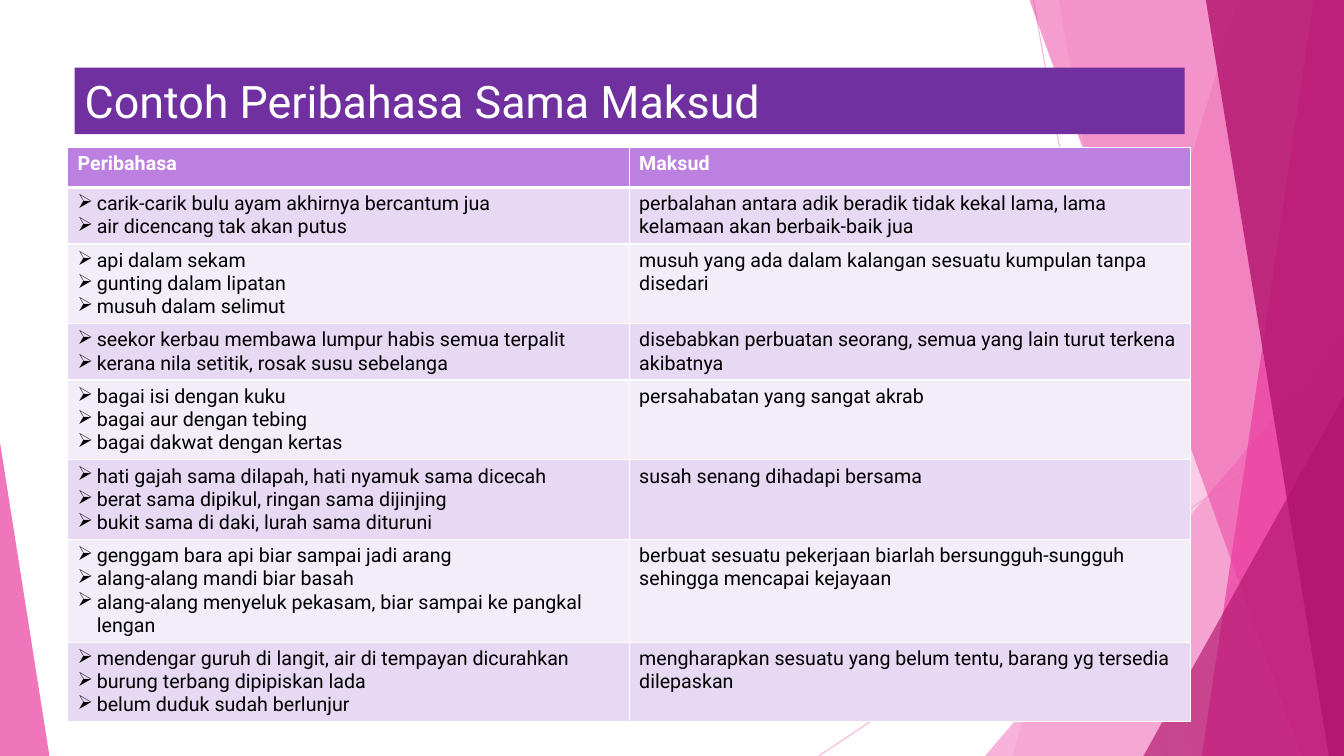
"""Build a slide with a table of Malay proverbs that share a meaning."""
from lxml import etree
from pptx import Presentation
from pptx.dml.color import RGBColor
from pptx.enum import shapes, text
from pptx.oxml import ns
from pptx import util as u

TITLE = "Contoh Peribahasa Sama Maksud"
HEADINGS = ("Peribahasa", "Maksud")
PROVERBS = [
    (["carik-carik bulu ayam akhirnya bercantum jua",
      "air dicencang tak akan putus"],
     "perbalahan antara adik beradik tidak kekal lama, lama kelamaan akan berbaik-baik jua"),
    (["api dalam sekam", "gunting dalam lipatan", "musuh dalam selimut"],
     "musuh yang ada dalam kalangan sesuatu kumpulan tanpa disedari"),
    (["seekor kerbau membawa lumpur habis semua terpalit",
      "kerana nila setitik, rosak susu sebelanga"],
     "disebabkan perbuatan seorang, semua yang lain turut terkena akibatnya"),
    (["bagai isi dengan kuku", "bagai aur dengan tebing", "bagai dakwat dengan kertas"],
     "persahabatan yang sangat akrab"),
    (["hati gajah sama dilapah, hati nyamuk sama dicecah",
      "berat sama dipikul, ringan sama dijinjing",
      "bukit sama di daki, lurah sama dituruni"],
     "susah senang dihadapi bersama"),
    (["genggam bara api biar sampai jadi arang", "alang-alang mandi biar basah",
      "alang-alang menyeluk pekasam, biar sampai ke pangkal lengan"],
     "berbuat sesuatu pekerjaan biarlah bersungguh-sungguh sehingga mencapai kejayaan"),
    (["mendengar guruh di langit, air di tempayan dicurahkan",
      "burung terbang dipipiskan lada", "belum duduk sudah berlunjur"],
     "mengharapkan sesuatu yang belum tentu, barang yg tersedia dilepaskan"),
]

PX = 9144
WIDTH, HEIGHT = 1333, 750
TITLE_BOX = (74, 67, 1101, 66)
TABLE_LEFT, TABLE_TOP, COLUMN = 67, 146, 557
HEADER_HEIGHT, LINE_HEIGHT, CELL_PADDING = 40, 23, 10
LINE_CHARS = 55
INDENT = 19

WHITE = RGBColor(0xFF, 0xFF, 0xFF)
BLACK = RGBColor(0x00, 0x00, 0x00)
PURPLE = RGBColor(0x70, 0x30, 0xA0)
HEADER = RGBColor(0xBC, 0x80, 0xE0)
BANDS = (RGBColor(0xE7, 0xD8, 0xF3), RGBColor(0xF3, 0xED, 0xF9))
PALE = RGBColor(0xF4, 0x96, 0xCB)
PINK = RGBColor(0xEB, 0x3D, 0x9F)
DEEP = RGBColor(0xB2, 0x13, 0x6D)

RAYS = [((1025, 0), (1158, HEIGHT)), ((WIDTH, 403), (812, HEIGHT))]
BLADE, TRIANGLE = "blade", "triangle"
FACETS = [
    (BLADE, (1228, 1004), PALE, 36),
    (BLADE, (1050, 1183), PALE, 20),
    (TRIANGLE, (977, 333, 356, 417, 1), PALE, 72),
    (BLADE, (1021, 1291), PINK, 50),
    (BLADE, (1303, 1192), PINK, 70),
    (BLADE, (1196, 1318), DEEP, 80),
    (TRIANGLE, (1134, 393, 199, 357, 1), DEEP, 66),
    (TRIANGLE, (0, 439, 49, 311, 0), PINK, 70),
]


def px(*lengths):
    return [length * PX for length in lengths]


def set_alpha(shape, percent):
    for color in shape._element.spPr.iter(ns.qn("a:srgbClr")):
        etree.SubElement(color, ns.qn("a:alpha"), val=str(percent * 1000))


def write(para, words, size=14, color=BLACK, bold=False, bullet=None):
    para.alignment = text.PP_ALIGN.LEFT
    span = para.add_run()
    span.text = words
    span.font.name = "Roboto"
    span.font.size = u.Pt(size)
    span.font.bold = bold
    span.font.color.rgb = color
    if bullet:
        props = para._p.get_or_add_pPr()
        props.set("marL", str(INDENT * PX))
        props.set("indent", str(-INDENT * PX))
        etree.SubElement(props, ns.qn("a:buChar"), char=bullet)


def draw_backdrop(page):
    for start, end in RAYS:
        ray = page.shapes.add_connector(shapes.MSO_CONNECTOR.STRAIGHT, *px(*start, *end))
        ray.line.color.rgb = PALE
        ray.line.width = u.Pt(0.75)
        set_alpha(ray, 70)
        etree.SubElement(ray._element.spPr, ns.qn("a:effectLst"))
    for kind, geometry, color, alpha in FACETS:
        if kind == BLADE:
            top, bottom = geometry
            outline = page.shapes.build_freeform(top, 0, scale=PX)
            outline.add_line_segments([(WIDTH, 0), (WIDTH, HEIGHT), (bottom, HEIGHT)])
            facet = outline.convert_to_shape()
        else:
            *frame, apex = geometry
            facet = page.shapes.add_shape(shapes.MSO_SHAPE.ISOSCELES_TRIANGLE, *px(*frame))
            facet.adjustments[0] = apex
        facet.shadow.inherit = False
        facet.line.fill.background()
        facet.fill.solid()
        facet.fill.fore_color.rgb = color
        set_alpha(facet, alpha)


def place_title(page):
    title = page.shapes.title
    page.shapes._spTree.append(title._element)
    title.left, title.top, title.width, title.height = px(*TITLE_BOX)
    title.fill.solid()
    title.fill.fore_color.rgb = PURPLE
    title.text_frame.vertical_anchor = text.MSO_ANCHOR.MIDDLE
    write(title.text_frame.paragraphs[0], TITLE, size=32, color=WHITE)


def format_cell(cell, fill, top=1, bottom=1):
    props = cell._tc.get_or_add_tcPr()
    for side, points in (("L", 1), ("R", 1), ("T", top), ("B", bottom)):
        border = etree.SubElement(props, ns.qn("a:ln" + side), w=str(u.Pt(points)))
        solid = etree.SubElement(border, ns.qn("a:solidFill"))
        etree.SubElement(solid, ns.qn("a:srgbClr"), val=str(WHITE))
    cell.fill.solid()
    cell.fill.fore_color.rgb = fill


def add_proverbs(page):
    heights = [HEADER_HEIGHT]
    for sayings, _ in PROVERBS:
        lines = sum(1 + len(saying) // LINE_CHARS for saying in sayings)
        heights.append(CELL_PADDING + LINE_HEIGHT * lines)
    frame = page.shapes.add_table(
        len(heights), 2, *px(TABLE_LEFT, TABLE_TOP, 2 * COLUMN, sum(heights)))
    table = frame.table
    for row, height in zip(table.rows, heights):
        row.height = height * PX
    for column, heading in enumerate(HEADINGS):
        cell = table.cell(0, column)
        format_cell(cell, HEADER, bottom=3)
        write(cell.text_frame.paragraphs[0], heading, color=WHITE, bold=True)
    for index, (sayings, meaning) in enumerate(PROVERBS):
        left, right = table.rows[index + 1].cells
        for cell in (left, right):
            format_cell(cell, BANDS[index % 2], top=1 if index else 3)
        box = left.text_frame
        for number, saying in enumerate(sayings):
            para = box.add_paragraph() if number else box.paragraphs[0]
            write(para, saying, bullet="➢")
        write(right.text_frame.paragraphs[0], meaning)


def main():
    deck = Presentation()
    deck.slide_width, deck.slide_height = px(WIDTH, HEIGHT)
    page = deck.slides.add_slide(deck.slide_layouts[5])
    draw_backdrop(page)
    place_title(page)
    add_proverbs(page)
    deck.save("out.pptx")


if __name__ == "__main__":
    main()
